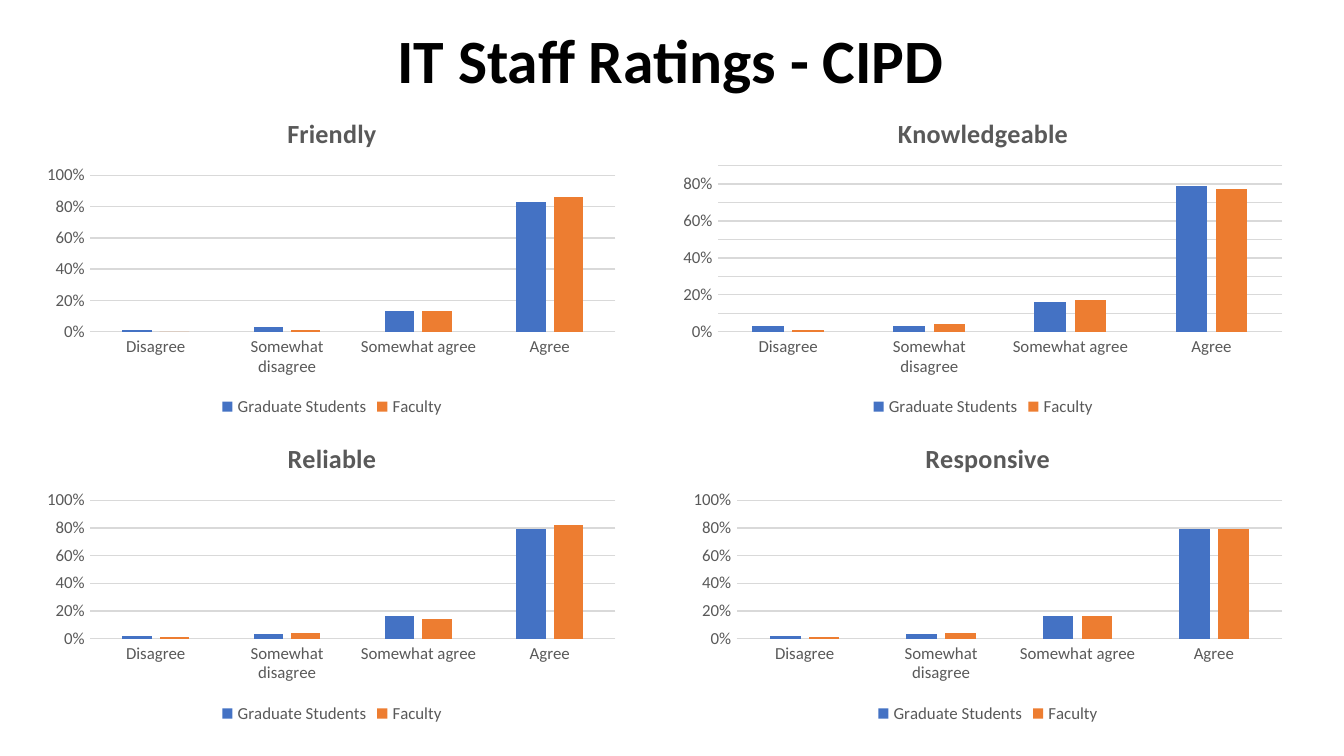
import pptx
import pptx.chart.data
import pptx.dml.color
import pptx.enum.chart
import pptx.enum.text
import pptx.oxml
import pptx.oxml.ns
import pptx.util

FONT = "Calibri"
GREY, GRID = "595959", "D9D9D9"


def rgb(hex_string):
    return pptx.dml.color.RGBColor.from_string(hex_string)


def style(font, size, color, bold=False):
    font.name, font.size, font.bold = FONT, pptx.util.Pt(size), bold
    font.color.rgb = rgb(color)


prs = pptx.Presentation()
prs.slide_width = pptx.util.Inches(10)
prs.slide_height = prs.slide_width * 9 // 16
s = prs.slides.add_slide(prs.slide_layouts[5])

# Grid of 100 columns by 100 rows
col, row = prs.slide_width / 100, prs.slide_height / 100

title = s.shapes.title
title.left, title.top = int(6.8 * col), int(-1.3 * row)
title.width, title.height = int(86.2 * col), int(19.4 * row)
tf = title.text_frame
tf.word_wrap = True
tf.auto_size = pptx.enum.text.MSO_AUTO_SIZE.NONE
tf.vertical_anchor = pptx.enum.text.MSO_ANCHOR.MIDDLE
p = tf.paragraphs[0]
p.alignment = pptx.enum.text.PP_ALIGN.CENTER
p.line_spacing = 0.9
r = p.add_run()
r.text = "IT Staff Ratings - CIPD"
style(r.font, 33, "000000", bold=True)

categories = ["Disagree", "Somewhat disagree", "Somewhat agree", "Agree"]
series_colors = {"Graduate Students": "4472C4", "Faculty": "ED7D31"}
upper, lower = (12.8, 43), (55.8, 40.6)  # top and height in rows

# name, left and width in columns, band, axis maximum and step, plot margins left and top, values
ratings = [
    ("Friendly", 2.7, 44, upper, 1, 0.2, 4, 10.4,
     [(0.01, 0.03, 0.13, 0.83), (0, 0.01, 0.13, 0.86)]),
    ("Knowledgeable", 50, 46.3, upper, 0.9, 0.1, 3.4, 9.1,
     [(0.03, 0.03, 0.16, 0.79), (0.01, 0.04, 0.17, 0.77)]),
    ("Reliable", 2.7, 44, lower, 1, 0.2, 4, 10.4,
     [(0.02, 0.03, 0.16, 0.79), (0.01, 0.04, 0.14, 0.82)]),
    ("Responsive", 50.7, 45.6, lower, 1, 0.2, 4.1, 10.4,
     [(0.02, 0.03, 0.16, 0.79), (0.01, 0.04, 0.16, 0.79)]),
]
margin_right, margin_bottom = 0.9, 11.9

for name, left, width, (top, height), peak, step, margin_left, margin_top, values in ratings:
    data = pptx.chart.data.CategoryChartData(number_format="0%")
    data.categories = categories
    for series_name, series_values in zip(series_colors, values):
        data.add_series(series_name, series_values)
    chart = s.shapes.add_chart(
        pptx.enum.chart.XL_CHART_TYPE.COLUMN_CLUSTERED,
        int(left * col), int(top * row), int(width * col), int(height * row), data).chart
    style(chart.font, 10, "000000")

    chart.has_title = True
    r = chart.chart_title.text_frame.paragraphs[0].add_run()
    r.text = name
    style(r.font, 14, GREY, bold=True)

    chart.has_legend = True
    chart.legend.position = pptx.enum.chart.XL_LEGEND_POSITION.BOTTOM
    chart.legend.include_in_layout = False
    style(chart.legend.font, 9, GREY)

    plot = chart.plots[0]
    plot.gap_width, plot.overlap = 219, -27
    plot.vary_by_categories = False
    for series, color in zip(plot.series, series_colors.values()):
        series.format.fill.solid()
        series.format.fill.fore_color.rgb = rgb(color)
        series.invert_if_negative = False

    for axis in (chart.category_axis, chart.value_axis):
        axis.major_tick_mark = pptx.enum.chart.XL_TICK_MARK.NONE
        axis.minor_tick_mark = pptx.enum.chart.XL_TICK_MARK.NONE
        style(axis.tick_labels.font, 9, GREY)
    axis.minimum_scale, axis.maximum_scale, axis.major_unit = 0, peak, step
    axis.tick_labels.number_format = "0%"
    axis.tick_labels.number_format_is_linked = False
    axis.format.line.fill.background()
    axis.has_major_gridlines = True
    for line in (axis.major_gridlines.format.line, chart.category_axis.format.line):
        line.color.rgb = rgb(GRID)
        line.width = pptx.util.Pt(0.75)

    # Fixed inner plot area, as shares of the chart
    area = chart.element.find(".//" + pptx.oxml.ns.qn("c:plotArea"))
    for old in area.findall(pptx.oxml.ns.qn("c:layout")):
        area.remove(old)
    shares = {
        "x": margin_left / width,
        "y": margin_top / height,
        "w": 1 - (margin_left + margin_right) / width,
        "h": 1 - (margin_top + margin_bottom) / height,
    }
    modes = '<c:layoutTarget val="inner"/><c:xMode val="edge"/><c:yMode val="edge"/>'
    sizes = "".join(f'<c:{key} val="{share:.4f}"/>' for key, share in shares.items())
    area.insert(0, pptx.oxml.parse_xml(
        f'<c:layout {pptx.oxml.ns.nsdecls("c")}><c:manualLayout>{modes}{sizes}'
        '</c:manualLayout></c:layout>'))

prs.save("out.pptx")
